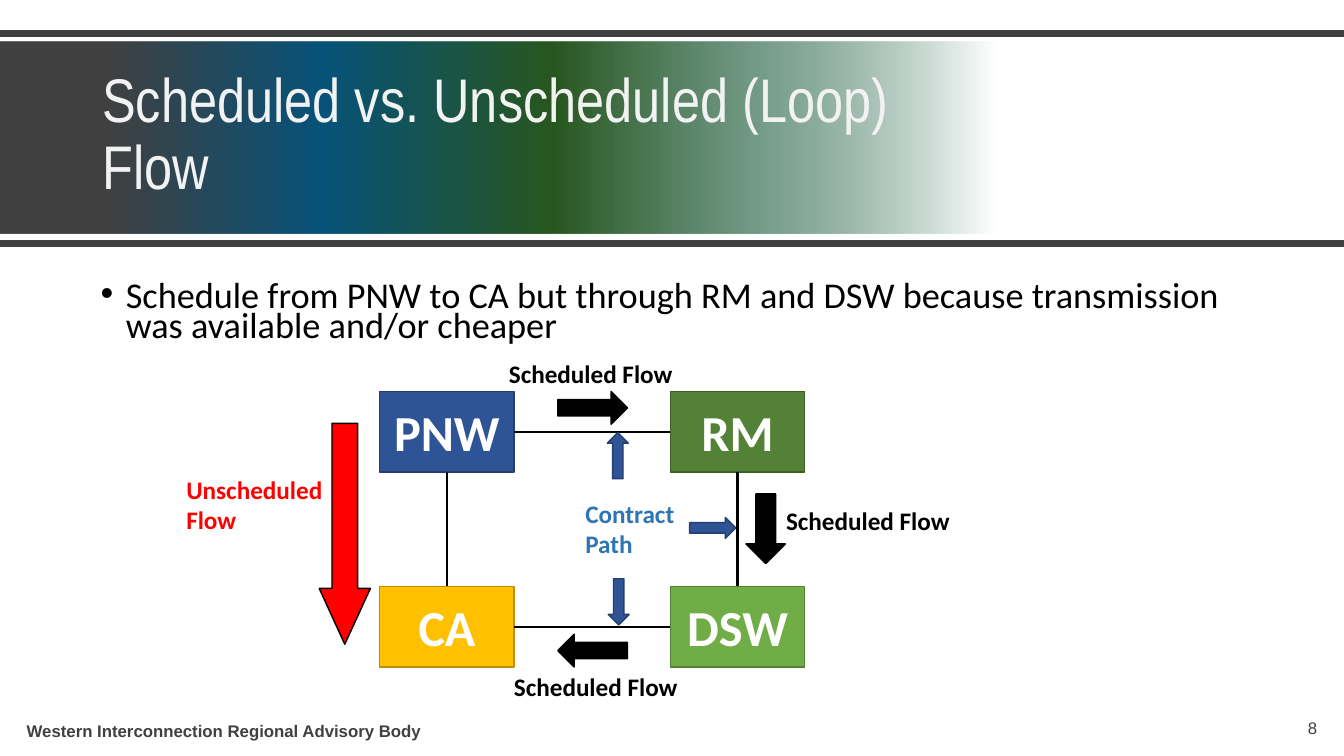
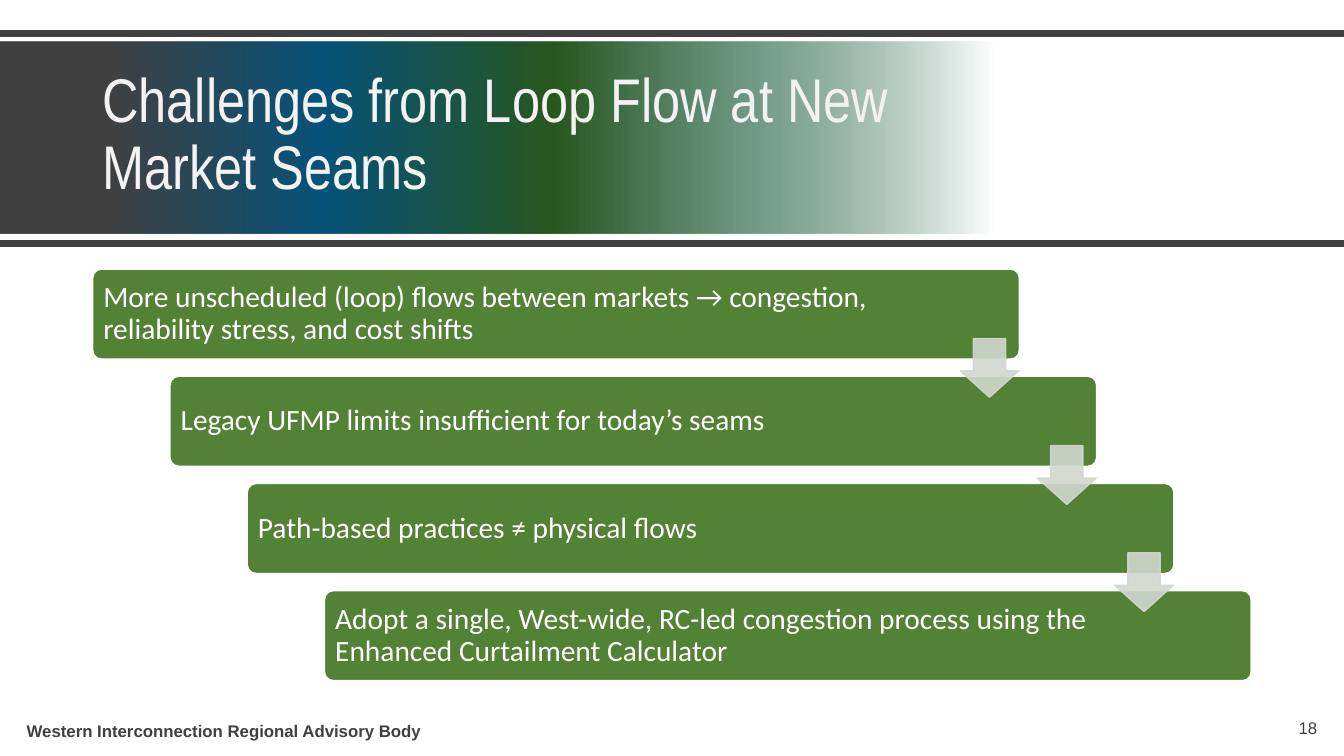
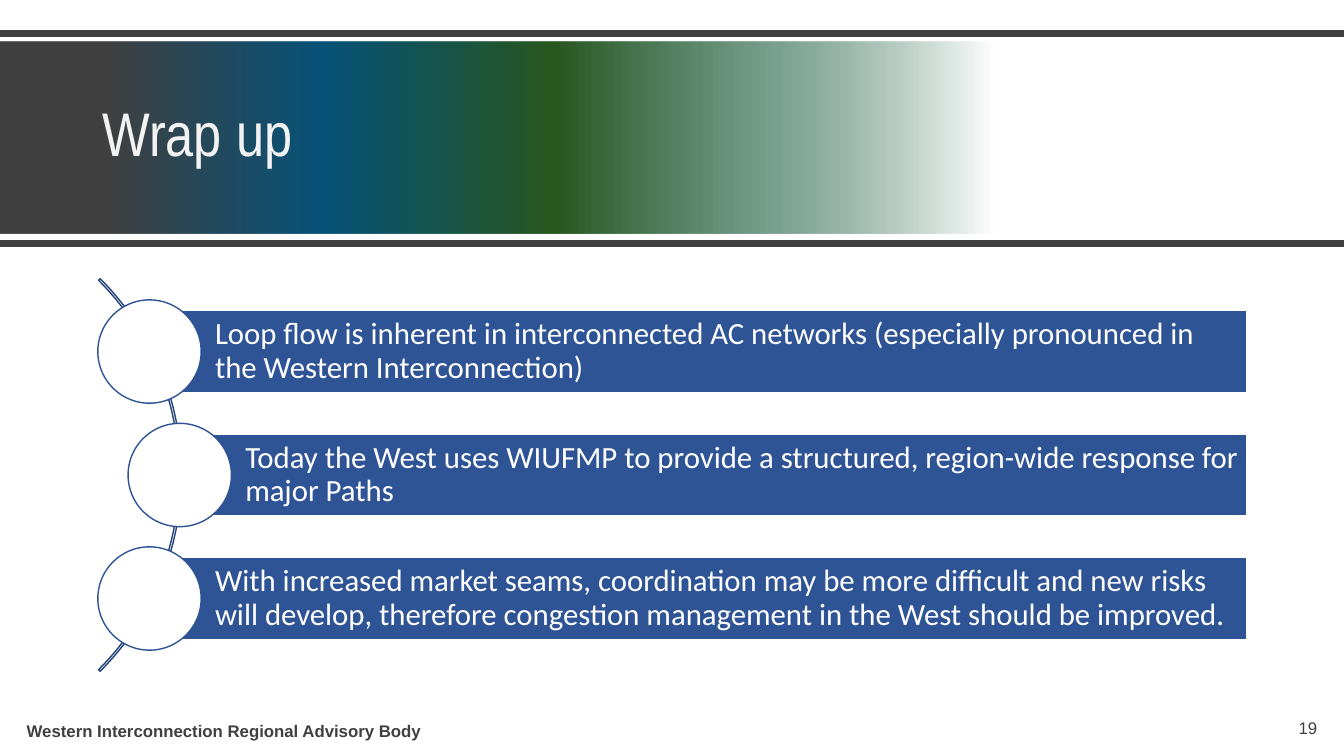
from dataclasses import dataclass
from typing import Optional

from lxml import etree
from pptx import Presentation
from pptx.dml.color import RGBColor
from pptx.enum.shapes import MSO_CONNECTOR, MSO_SHAPE
from pptx.enum.text import MSO_ANCHOR, PP_ALIGN
from pptx.oxml import parse_xml
from pptx.oxml.ns import nsdecls, qn
from pptx.util import Emu, Pt

CELL = 76200  # the slide is a grid of square cells, twelve to the inch
COLUMNS, ROWS = 160, 90

COLORS = {
    "white": "FFFFFF", "black": "000000", "charcoal": "404040", "title": "F2F2F2",
    "blue": "2F5496", "blue_edge": "233E6F", "arc": "264378", "contract": "2E75B6",
    "gold": "FFC000", "gold_edge": "BD8E00", "forest": "538135", "forest_edge": "3D5F27",
    "leaf": "70AD47", "leaf_edge": "538035", "red": "FF0000", "mist": "D1D8CE",
    "ocean": "065279", "pine": "28561E", "teal": "3B735A",
}
# position %, colour, opacity %
BAND_STOPS = [(8, "charcoal", 100), (24, "ocean", 100), (41, "pine", 100),
              (57, "teal", 69), (74, "white", 95)]
OWNER = "Western Interconnection Regional Advisory Body"
TOP, LEFT, BOTTOM, RIGHT = range(4)


@dataclass(frozen=True)
class Box:
    """A rectangle in grid cells."""
    left: float
    top: float
    width: float
    height: float

    def emu(self) -> list[Emu]:
        return [cells(v) for v in (self.left, self.top, self.width, self.height)]


@dataclass(frozen=True)
class Region:
    name: str
    column: float
    row: float
    color: str


@dataclass(frozen=True)
class Arrow:
    box: Box
    fill: str
    edge: str
    rotation: int = 0


@dataclass(frozen=True)
class Label:
    text: str
    box: Box
    color: str = "black"
    wrap: bool = False


def cells(count: float) -> Emu:
    return Emu(round(count * CELL))


def rgb(name: str) -> RGBColor:
    return RGBColor.from_string(COLORS[name])


def write(frame, text: str, *, size: float, color: str, font: str = "Calibri",
          bold: bool = False, align=PP_ALIGN.LEFT, anchor=MSO_ANCHOR.TOP,
          spacing: Optional[float] = None, wrap: bool = True, bullet: bool = False,
          margins: Optional[tuple] = None) -> None:
    """Fill a text frame, one paragraph per line; margins run left, top, right, bottom."""
    frame.word_wrap = wrap
    frame.vertical_anchor = anchor
    if margins:
        (frame.margin_left, frame.margin_top,
         frame.margin_right, frame.margin_bottom) = map(cells, margins)
    for index, line in enumerate(text.split("\n")):
        paragraph = frame.add_paragraph() if index else frame.paragraphs[0]
        if bullet:
            properties = paragraph._p.get_or_add_pPr()
            properties.set("marL", str(cells(3)))
            properties.set("indent", str(-cells(3)))
            etree.SubElement(properties, qn("a:buFont")).set("typeface", "Arial")
            etree.SubElement(properties, qn("a:buChar")).set("char", "•")
        paragraph.alignment = align
        if spacing:
            paragraph.line_spacing = spacing
        run = paragraph.add_run()
        run.text = line
        run.font.name, run.font.size, run.font.bold = font, Pt(size), bold
        run.font.color.rgb = rgb(color)


def add_text(slide, box: Box, text: str, **style) -> None:
    write(slide.shapes.add_textbox(*box.emu()).text_frame, text, **style)


def add_figure(slide, preset, box: Box, fill: Optional[str], edge: Optional[str],
               weight: float = 1, adjust: tuple = (), opacity: int = 100):
    figure = slide.shapes.add_shape(preset, *box.emu())
    figure.shadow.inherit = False
    for index, value in enumerate(adjust):
        figure.adjustments[index] = value
    if fill:
        figure.fill.solid()
        figure.fill.fore_color.rgb = rgb(fill)
    else:
        figure.fill.background()
    if edge:
        figure.line.color.rgb = rgb(edge)
        figure.line.width = Pt(weight)
    else:
        figure.line.fill.background()
    if opacity < 100:
        for color in list(figure._element.spPr.iter(qn("a:srgbClr"))):
            etree.SubElement(color, qn("a:alpha")).set("val", str(opacity * 1000))
    return figure


def add_line(slide, start: tuple, end: tuple, color: str, weight: float):
    line = slide.shapes.add_connector(MSO_CONNECTOR.STRAIGHT, *map(cells, start + end))
    line.line.color.rgb = rgb(color)
    line.line.width = Pt(weight)
    etree.SubElement(line._element.spPr, qn("a:effectLst"))
    return line


def add_band(slide) -> None:
    """Draw the title band, whose gradient fades out to the right."""
    band = add_figure(slide, MSO_SHAPE.RECTANGLE, Box(0, 5, COLUMNS, 22.8), None, None)
    stops = "".join(
        f'<a:gs pos="{position * 1000}"><a:srgbClr val="{COLORS[color]}">'
        f'<a:alpha val="{opacity * 1000}"/></a:srgbClr></a:gs>'
        for position, color, opacity in BAND_STOPS)
    properties = band._element.spPr
    properties.replace(properties.find(qn("a:noFill")), parse_xml(
        f'<a:gradFill {nsdecls("a")} rotWithShape="1"><a:gsLst>{stops}</a:gsLst>'
        '<a:lin ang="0" scaled="0"/></a:gradFill>'))
    for row in (4, 29):
        add_line(slide, (0, row), (COLUMNS, row), "charcoal", 4.5)


def new_slide(deck, title: str, number: int):
    slide = deck.slides.add_slide(deck.slide_layouts[6])
    add_band(slide)
    add_text(slide, Box(2, 85.2, 54, 3.6), OWNER, size=12, color="charcoal",
             font="Arial", bold=True)
    add_text(slide, Box(122, 84.8, 36, 3.6), str(number), size=12, color="charcoal",
             font="Arial", align=PP_ALIGN.RIGHT)
    add_text(slide, Box(11, 7, 96.6, 18.4), title, size=44, color="title",
             font="Arial Narrow", anchor=MSO_ANCHOR.MIDDLE, spacing=0.9)
    return slide


def flow_slide(deck) -> None:
    slide = new_slide(deck, "Scheduled vs. Unscheduled (Loop) Flow", 8)
    add_text(slide, Box(10.8, 33.2, 138, 9.1),
             "Schedule from PNW to CA but through RM and DSW because transmission "
             "was available and/or cheaper",
             size=25.9, color="black", spacing=0.7, bullet=True)

    west, east, north, south = 45.2, 79.8, 46.6, 69.8
    nodes = {}
    for region in (Region("PNW", west, north, "blue"), Region("CA", west, south, "gold"),
                   Region("RM", east, north, "forest"), Region("DSW", east, south, "leaf")):
        node = add_figure(slide, MSO_SHAPE.RECTANGLE, Box(region.column, region.row, 16, 9.6),
                          region.color, f"{region.color}_edge")
        write(node.text_frame, region.name, size=36, color="white", bold=True,
              align=PP_ALIGN.CENTER, anchor=MSO_ANCHOR.MIDDLE)
        nodes[region.name] = node

    for source, source_side, target, target_side in (
            ("CA", TOP, "PNW", BOTTOM), ("DSW", TOP, "RM", BOTTOM),
            ("CA", RIGHT, "DSW", LEFT), ("RM", LEFT, "PNW", RIGHT)):
        path = add_line(slide, (0, 0), (0, 0), "black", 1.5)
        path.begin_connect(nodes[source], source_side)
        path.end_connect(nodes[target], target_side)

    for arrow in (Arrow(Box(66.4, 46.6, 8.3, 3.9), "black", "black"),
                  Arrow(Box(66.4, 75.5, 8.3, 3.9), "black", "black", 180),
                  Arrow(Box(87, 60.6, 8.3, 4.7), "black", "black", 90),
                  Arrow(Box(70.8, 53, 5.5, 2.5), "blue", "blue_edge", 270),
                  Arrow(Box(70.9, 70.4, 5.5, 2.5), "blue", "blue_edge", 90),
                  Arrow(Box(82.1, 61.6, 5.5, 2.5), "blue", "blue_edge")):
        add_figure(slide, MSO_SHAPE.RIGHT_ARROW, arrow.box, arrow.fill,
                   arrow.edge).rotation = arrow.rotation
    add_figure(slide, MSO_SHAPE.DOWN_ARROW, Box(38, 50.4, 6.1, 26.3), "red", "black",
               adjust=(0.5, 1.09))

    scheduled = [Label("Scheduled Flow", Box(column, row, 22, 4.8))
                 for column, row in ((59.4, 42.1), (92.4, 59.6), (60, 79.3))]
    for label in (*scheduled,
                  Label("Unscheduled\nFlow", Box(21, 55.9, 18.7, 8.5), "red"),
                  Label("Contract Path", Box(68.5, 58.7, 13.2, 8.5), "contract", True)):
        add_text(slide, label.box, label.text, size=18, color=label.color, bold=True,
                 wrap=label.wrap)


def challenges_slide(deck) -> None:
    slide = new_slide(deck, "Challenges from Loop Flow at New Market Seams", 18)
    challenges = (
        "More unscheduled (loop) flows between markets → congestion, reliability stress, "
        "and cost shifts",
        "Legacy UFMP limits insufficient for today’s seams",
        "Path-based practices ≠ physical flows",
        "Adopt a single, West-wide, RC-led congestion process using the Enhanced "
        "Curtailment Calculator",
    )
    corners = [(11 + 9.2 * step, 32 + 12.76 * step) for step in range(len(challenges))]
    for (left, top), challenge in zip(corners, challenges):
        stair = add_figure(slide, MSO_SHAPE.ROUNDED_RECTANGLE, Box(left, top, 110.4, 10.8),
                           "forest", "white", 1.5, adjust=(0.1,))
        write(stair.text_frame, challenge, size=21, color="white", spacing=0.9,
              anchor=MSO_ANCHOR.MIDDLE, margins=(1, 1, 15.6, 1))
    for left, top in corners[:-1]:
        add_figure(slide, MSO_SHAPE.DOWN_ARROW, Box(left + 103.3, top + 8.3, 7, 7),
                   "mist", "mist", adjust=(0.55, 0.45), opacity=90)


def wrap_up_slide(deck) -> None:
    slide = new_slide(deck, "Wrap up", 19)
    add_figure(slide, MSO_SHAPE.BLOCK_ARC, Box(-44.5, 23.5, 66.1, 66.1), None, "arc",
               adjust=(189, 27, 0.004))
    right, height, diameter = 148.4, 9.8, 12.3
    takeaways = (
        (17.8, "Loop flow is inherent in interconnected AC networks (especially pronounced "
               "in the Western Interconnection)"),
        (21.4, "Today the West uses WIUFMP to provide a structured, region-wide response "
               "for major Paths"),
        (17.8, "With increased market seams, coordination may be more difficult and new "
               "risks will develop, therefore congestion management in the West should be "
               "improved."),
    )
    for index, (left, takeaway) in enumerate(takeaways):
        top = 36.95 + 14.7 * index
        bar = add_figure(slide, MSO_SHAPE.RECTANGLE, Box(left, top, right - left, height),
                         "blue", "white")
        write(bar.text_frame, takeaway, size=22, color="white", spacing=0.9,
              anchor=MSO_ANCHOR.MIDDLE, margins=(7.8, 0.7, 0.7, 0.7))
        add_figure(slide, MSO_SHAPE.OVAL,
                   Box(left - diameter / 2, top + (height - diameter) / 2, diameter, diameter),
                   "white", "blue")


def main() -> None:
    deck = Presentation()
    deck.slide_width, deck.slide_height = cells(COLUMNS), cells(ROWS)
    flow_slide(deck)
    challenges_slide(deck)
    wrap_up_slide(deck)
    deck.save("out.pptx")


if __name__ == "__main__":
    main()
